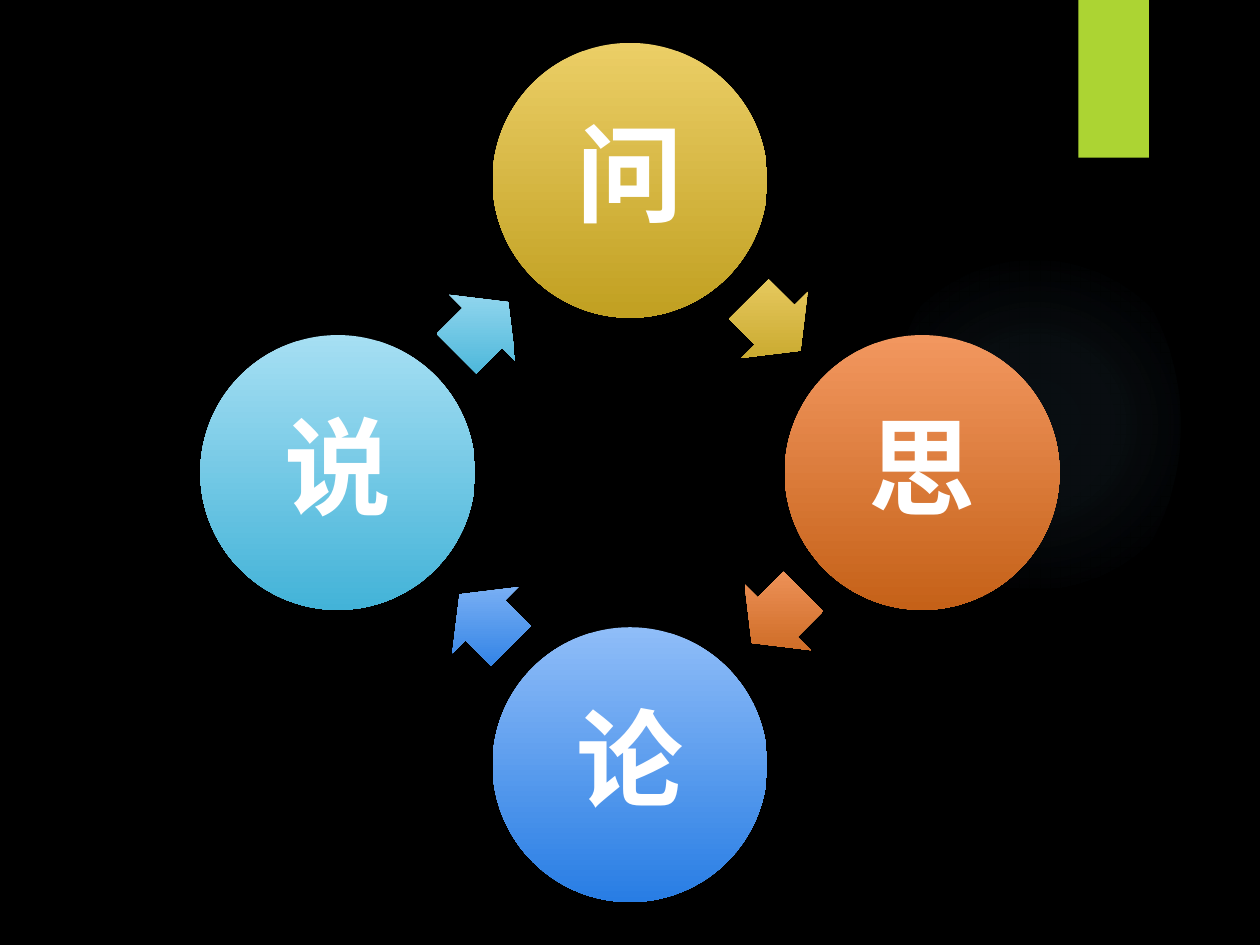
from dataclasses import dataclass
from math import cos, radians, sin

from lxml.etree import SubElement
from pptx import Presentation
from pptx.dml.color import RGBColor
from pptx.enum.shapes import MSO_SHAPE
from pptx.enum.text import MSO_ANCHOR, PP_ALIGN
from pptx.oxml.ns import qn
from pptx.shapes.autoshape import Shape
from pptx.slide import Slide
from pptx.util import Cm, Pt

FONT = "Noto Sans CJK TC"
BLACK = RGBColor(0x00, 0x00, 0x00)
WHITE = RGBColor(0xFF, 0xFF, 0xFF)
LIME = RGBColor(0xAC, 0xD4, 0x33)
SKY = RGBColor(0x7A, 0xC4, 0xF0)

WIDE, HIGH = 25.4, 19.05
ORBIT = 5.89
DISC = 5.54
LABEL = 3.92
ARROW_W, ARROW_H = 1.47, 1.88
ARROW_AT = 0.495  # share of the way to the next disc


@dataclass(frozen=True)
class Step:
    text: str
    light: RGBColor
    dark: RGBColor


STEPS = [
    Step("问", RGBColor(0xEB, 0xCE, 0x66), RGBColor(0xC1, 0xA0, 0x21)),
    Step("思", RGBColor(0xF2, 0x97, 0x5F), RGBColor(0xC5, 0x61, 0x18)),
    Step("论", RGBColor(0x8F, 0xBD, 0xF8), RGBColor(0x28, 0x7D, 0xE4)),
    Step("说", RGBColor(0xA6, 0xDF, 0xF3), RGBColor(0x43, 0xB3, 0xD8)),
]


def add_shape(slide: Slide, kind: MSO_SHAPE, x: float, y: float,
              w: float, h: float) -> Shape:
    """Add a plain shape centred on x, y (in cm)."""
    shape = slide.shapes.add_shape(
        kind, Cm(x - w / 2), Cm(y - h / 2), Cm(w), Cm(h))
    shape.shadow.inherit = False
    shape.line.fill.background()
    return shape


def add_text(slide: Slide, text: str, x: float, y: float, side: float, *,
             size: float, color: RGBColor, bold: bool = False) -> None:
    """Add a square text box centred on x, y (in cm)."""
    box = slide.shapes.add_textbox(
        Cm(x - side / 2), Cm(y - side / 2), Cm(side), Cm(side))
    frame = box.text_frame
    frame.word_wrap = True
    frame.vertical_anchor = MSO_ANCHOR.MIDDLE
    frame.margin_left = frame.margin_right = Cm(0.2)
    frame.margin_top = frame.margin_bottom = Cm(0.2)
    para = frame.paragraphs[0]
    para.alignment = PP_ALIGN.CENTER
    para.line_spacing = 0.9
    run = para.add_run()
    run.text = text
    run.font.name = FONT
    run.font.size = Pt(size)
    run.font.bold = bold
    run.font.color.rgb = color
    SubElement(run.font._element, qn("a:ea"), typeface=FONT)


def fill_fade(shape: Shape, step: Step) -> None:
    """Fade from light at the top to dark, however the shape is turned."""
    fill = shape.fill
    fill.gradient()
    fill.gradient_angle = 270
    for stop, color in zip(fill.gradient_stops, (step.light, step.dark)):
        stop.color.rgb = color
    shape._element.spPr.find(qn("a:gradFill")).set("rotWithShape", "0")


def fill_glow(shape: Shape, color: RGBColor) -> None:
    """Fill with a faint glow that fades out from the centre."""
    shape.fill.gradient()
    grad = shape._element.spPr.find(qn("a:gradFill"))
    for child in list(grad):
        grad.remove(child)
    stops = SubElement(grad, qn("a:gsLst"))
    for place, alpha in ((0, 7), (36, 6), (69, 0)):
        stop = SubElement(stops, qn("a:gs"), pos=str(place * 1000))
        tint = SubElement(stop, qn("a:srgbClr"), val=str(color))
        SubElement(tint, qn("a:alpha"), val=str(alpha * 1000))
    ring = SubElement(grad, qn("a:path"), path="circle")
    SubElement(ring, qn("a:fillToRect"),
               {side: "50000" for side in "ltrb"})


def disc_mid(index: int) -> tuple[float, float]:
    turn = radians(90 * index - 90)
    return WIDE / 2 + ORBIT * cos(turn), HIGH / 2 + ORBIT * sin(turn)


def add_step(slide: Slide, index: int, step: Step) -> None:
    x, y = disc_mid(index)
    disc = add_shape(slide, MSO_SHAPE.OVAL, x, y, DISC, DISC)
    fill_fade(disc, step)
    add_text(slide, step.text, x, y, LABEL, size=61, color=WHITE, bold=True)

    next_x, next_y = disc_mid(index + 1)
    arrow = add_shape(slide, MSO_SHAPE.RIGHT_ARROW,
                      x + (next_x - x) * ARROW_AT,
                      y + (next_y - y) * ARROW_AT, ARROW_W, ARROW_H)
    arrow.adjustments[0] = 0.6
    arrow.adjustments[1] = 0.5
    arrow.rotation = 45 + 90 * index
    fill_fade(arrow, step)


def main() -> None:
    deck = Presentation()
    deck.slide_width, deck.slide_height = Cm(WIDE), Cm(HIGH)
    slide = deck.slides.add_slide(deck.slide_layouts[6])
    back = slide.background.fill
    back.solid()
    back.fore_color.rgb = BLACK

    glow = add_shape(slide, MSO_SHAPE.OVAL, 20.87, 8.56, 5.87, 7.82)
    fill_glow(glow, SKY)
    tab = add_shape(slide, MSO_SHAPE.RECTANGLE, 22.45, 1.59, 1.42, 3.18)
    tab.fill.solid()
    tab.fill.fore_color.rgb = LIME

    for index, step in enumerate(STEPS):
        add_step(slide, index, step)
    deck.save("out.pptx")


if __name__ == "__main__":
    main()
